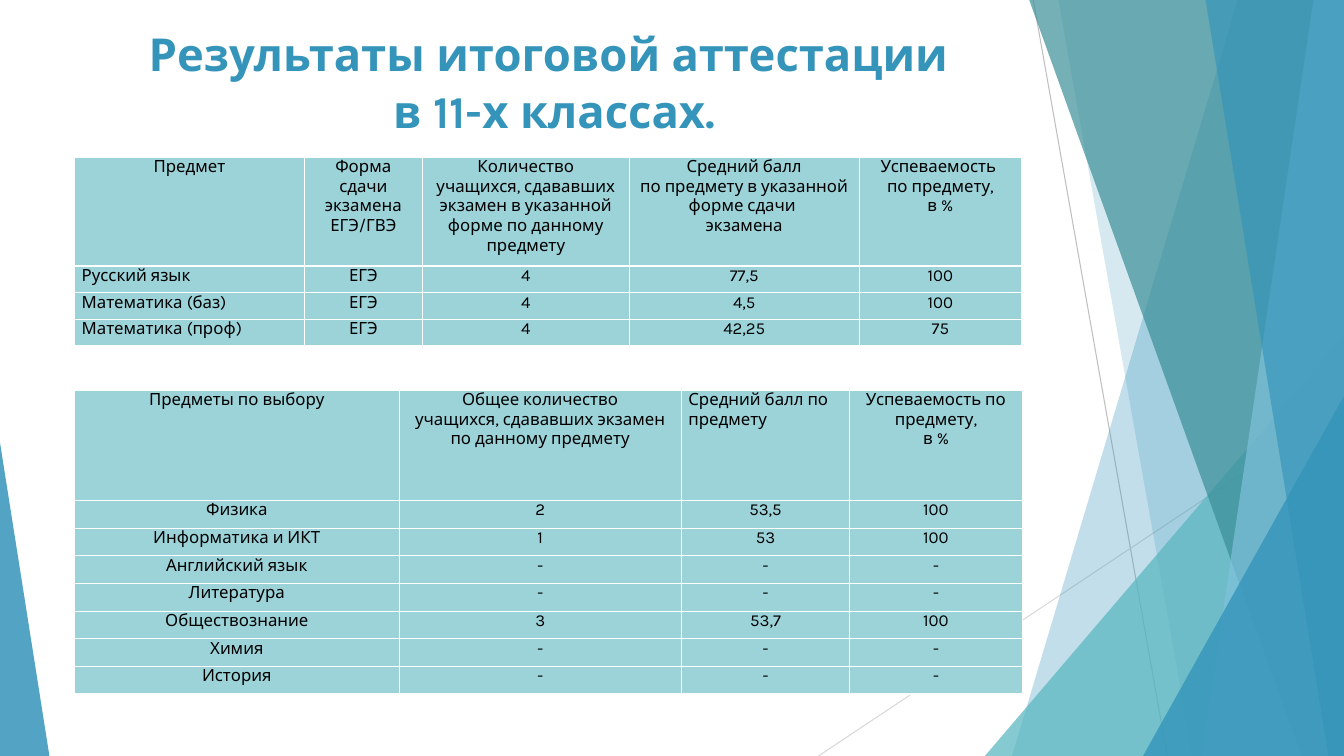
from dataclasses import dataclass, field
from typing import Any

from lxml.etree import SubElement as Sub
from pptx import Presentation
from pptx.dml.color import RGBColor
from pptx.enum.shapes import MSO_CONNECTOR as Link, MSO_SHAPE as Form
from pptx.enum.text import MSO_ANCHOR as Anchor, MSO_AUTO_SIZE as Fit, PP_ALIGN as Align
from pptx.oxml.ns import qn
from pptx.util import Inches, Pt

WIDE, HIGH = Inches(13.33), Inches(7.5)
BLUE, TEAL, WHITE, BLACK, PALE = "3494BA", "58B6C0", "FFFFFF", "000000", "9BD3D9"
FONT = "Karla"
LEFT, SPAN = 5.55, 70.5  # shared column of title and tables, % of width


@dataclass
class Ray:
    start: tuple[float, float]
    end: tuple[float, float]
    color: str


@dataclass
class Facet:
    """Band from the top edge (top) to the bottom edge (foot), filled to the right."""
    top: float
    foot: float
    color: str
    alpha: int


@dataclass
class Wedge:
    """Triangle that stands on the bottom edge; tip is 0 for left, 1 for right."""
    left: float
    top: float
    width: float
    tip: int
    color: str
    alpha: int


@dataclass
class Grid:
    top: float
    cols: list[float]
    head: float
    row: float
    cells: list[list[str]]
    flush: set[tuple[int, int]] = field(default_factory=set)


DECOR = [
    Ray((76.88, 0), (86.85, 100), "BFBFBF"),
    Ray((100, 53.73), (60.9, 100), "D9D9D9"),
    Facet(92.1, 75.3, BLUE, 30),
    Facet(78.75, 88.73, BLUE, 20),
    Wedge(73.28, 44.4, 26.72, 1, TEAL, 72),
    Facet(76.58, 96.83, "3A8F98", 70),
    Facet(97.73, 89.4, "7FC1DB", 70),
    Facet(89.7, 98.85, BLUE, 65),
    Wedge(85.05, 52.4, 14.95, 1, BLUE, 80),
    Wedge(0, 58.53, 3.68, 0, BLUE, 85),
]

GRIDS = [
    Grid(20.8, [17.1, 8.78, 15.4, 17.1, 12.1], 14.4, 3.52, [
        ["Предмет", "Форма сдачи экзамена\nЕГЭ/ГВЭ",
         "Количество\nучащихся, сдававших экзамен в указанной форме по данному предмету",
         "Средний балл\nпо предмету в указанной форме сдачи \nэкзамена",
         "Успеваемость \nпо предмету,\nв %"],
        ["Русский язык", "ЕГЭ", "4", "77,5", "100"],
        ["Математика (баз)", "ЕГЭ", "4", "4,5", "100"],
        ["Математика (проф)", "ЕГЭ", "4", "42,25", "75"],
    ], {(1, 0), (2, 0), (3, 0)}),
    Grid(51.6, [24.15, 21, 12.53, 12.83], 14.6, 3.66, [
        ["Предметы по выбору",
         "Общее количество\nучащихся, сдававших экзамен по данному предмету",
         "Средний балл по предмету", "Успеваемость по предмету,\nв %"],
        ["Физика", "2", "53,5", "100"],
        ["Информатика и ИКТ", "1", "53", "100"],
        ["Английский язык", "-", "-", "-"],
        ["Литература", "-", "-", "-"],
        ["Обществознание", "3", "53,7", "100"],
        ["Химия", "-", "-", "-"],
        ["История", "-", "-", "-"],
    ], {(0, 2)}),
]


def across(share: float) -> int:
    return round(WIDE * share / 100)


def down(share: float) -> int:
    return round(HIGH * share / 100)


def tint(code: str) -> RGBColor:
    return RGBColor.from_string(code)


def apply(item: Any, form: dict[str, Any]) -> None:
    for name, value in form.items():
        setattr(item, name, value)


def style(font: Any, color: str, form: dict[str, Any]) -> None:
    apply(font, {"name": FONT, **form})
    font.color.rgb = tint(color)


def paint(shape: Any, color: str, alpha: int) -> None:
    shape.shadow.inherit = False
    shape.line.fill.background()
    shape.fill.solid()
    shape.fill.fore_color.rgb = tint(color)
    code = shape.element.spPr.find(".//" + qn("a:srgbClr"))
    Sub(code, qn("a:alpha"), val=str(alpha * 1000))


def draw(shapes: Any, part: Ray | Facet | Wedge) -> None:
    match part:
        case Ray(start, end, color):
            ray = shapes.add_connector(Link.STRAIGHT, across(start[0]), down(start[1]),
                                       across(end[0]), down(end[1]))
            ray.line.width = Pt(0.75)
            ray.line.color.rgb = tint(color)
            Sub(ray.element.spPr, qn("a:effectLst"))
        case Facet(top, foot, color, alpha):
            pen = shapes.build_freeform(across(top), 0, scale=1.0)
            pen.add_line_segments([(WIDE, 0), (WIDE, HIGH), (across(foot), HIGH)])
            paint(pen.convert_to_shape(), color, alpha)
        case Wedge(left, top, width, tip, color, alpha):
            wedge = shapes.add_shape(Form.ISOSCELES_TRIANGLE, across(left), down(top),
                                     across(width), down(100 - top))
            wedge.adjustments[0] = tip
            paint(wedge, color, alpha)


def frame(cell: Any) -> None:
    """Give the cell a thin white border on all sides."""
    props = cell._tc.get_or_add_tcPr()
    for side in "LRTB":
        edge = Sub(props, qn("a:ln" + side), w=str(Pt(1)))
        Sub(Sub(edge, qn("a:solidFill")), qn("a:srgbClr"), val=WHITE)


def write(cell: Any, text: str, align: Align) -> None:
    apply(cell, {"margin_left": Inches(0.07), "margin_right": Inches(0.07),
                 "margin_top": 0, "margin_bottom": 0, "text": text})
    frame(cell)
    cell.fill.solid()
    cell.fill.fore_color.rgb = tint(PALE)
    for para in cell.text_frame.paragraphs:
        para.alignment = align
        style(para.runs[0].font, BLACK, {"size": Pt(12), "bold": False})


def tabulate(shapes: Any, grid: Grid) -> None:
    rows = [grid.head] + [grid.row] * (len(grid.cells) - 1)
    table = shapes.add_table(len(rows), len(grid.cols), across(LEFT), down(grid.top),
                             across(SPAN), down(sum(rows))).table
    apply(table, {"first_row": False, "horz_banding": False})
    for col, width in zip(table.columns, grid.cols):
        col.width = across(width)
    for r, (row, height) in enumerate(zip(table.rows, rows)):
        row.height = down(height)
        for c, text in enumerate(grid.cells[r]):
            align = Align.LEFT if (r, c) in grid.flush else Align.CENTER
            write(row.cells[c], text, align)


def entitle(title: Any) -> None:
    apply(title, {"left": across(LEFT), "top": down(2.4),
                  "width": across(SPAN), "height": down(12.53)})
    body = title.text_frame
    apply(body, {"text": "Результаты итоговой аттестации\v в 11-х классах.",
                 "word_wrap": True, "auto_size": Fit.NONE, "vertical_anchor": Anchor.TOP})
    para = body.paragraphs[0]
    apply(para, {"alignment": Align.CENTER, "line_spacing": 1.05})
    for run in para.runs:
        style(run.font, BLUE, {"size": Pt(32.4), "bold": True})


def main() -> None:
    deck = Presentation()
    apply(deck, {"slide_width": WIDE, "slide_height": HIGH})
    slide = deck.slides.add_slide(deck.slide_layouts[5])
    for part in DECOR:
        draw(slide.shapes, part)
    entitle(slide.shapes.title)
    for grid in GRIDS:
        tabulate(slide.shapes, grid)
    deck.save("out.pptx")


if __name__ == "__main__":
    main()
